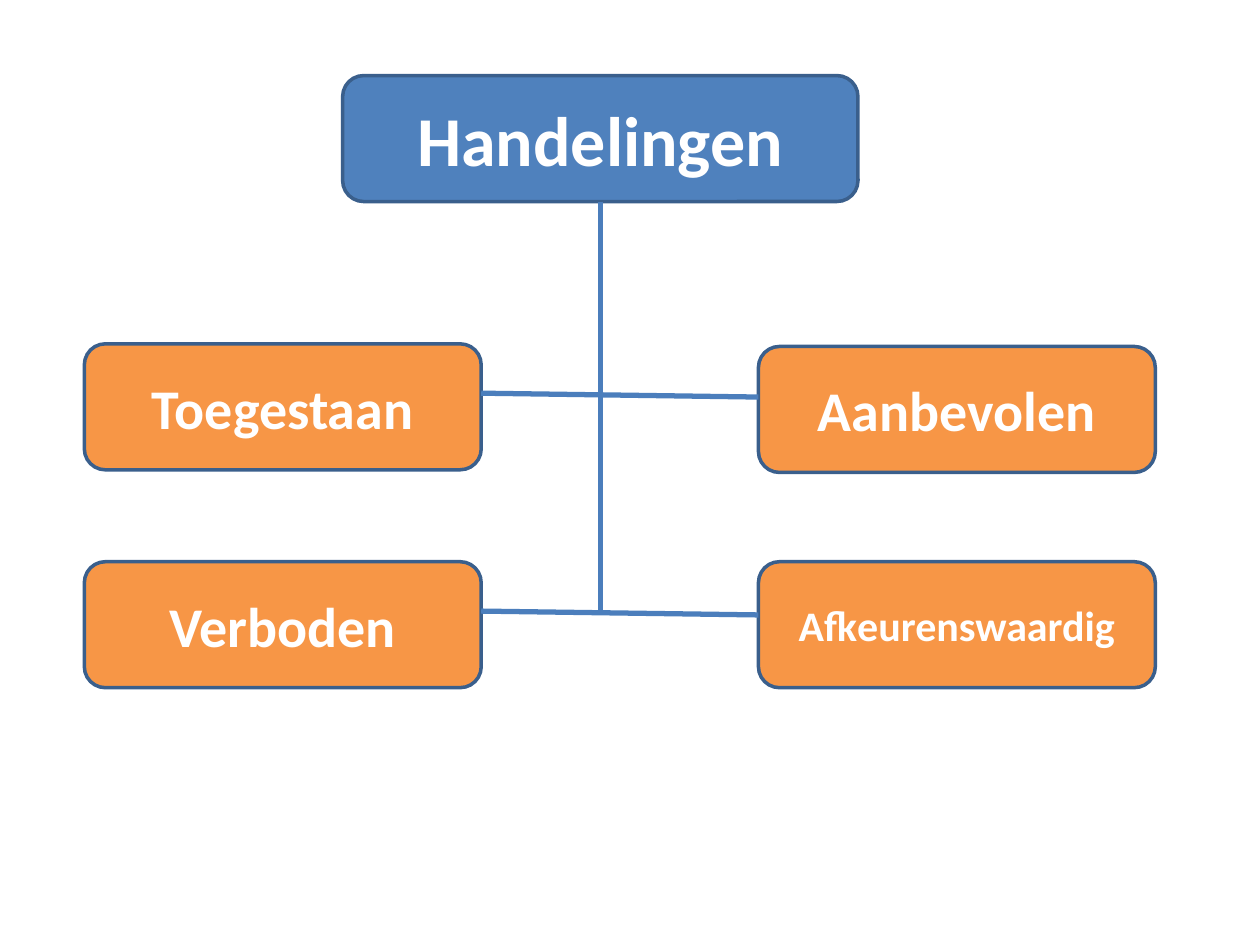
import pptx
import pptx.util
import pptx.dml.color
import pptx.enum.shapes
import pptx.enum.text
import pptx.oxml.ns
import lxml.etree

Pt = pptx.util.Pt

COLORS = {
    "root": "4F81BD",
    "category": "F79646",
    "border": "3A5F8C",
    "connector": "4B7EBC",
    "text": "FFFFFF",
}

ROOT = "Handelingen"
ROWS = [
    [("Toegestaan", 32, 196.5), ("Aanbevolen", 32, 198)],
    [("Verboden", 32, 321), ("Afkeurenswaardig", 24, 321)],
]

ROOT_LEFT, ROOT_TOP, ROOT_WIDTH = 195.8, 43.2, 294.5
COLUMN_LEFTS = [48.2, 433.4]
CATEGORY_WIDTH, BOX_HEIGHT = 226.8, 72
BRANCH_OFFSET, BRANCH_DROP = 28.2, 2.2


def rgb(name):
    return pptx.dml.color.RGBColor.from_string(COLORS[name])


def write_text(frame, text, size, color="text", font="Calibri", bold=True):
    frame.word_wrap = True
    frame.vertical_anchor = pptx.enum.text.MSO_ANCHOR.MIDDLE
    para = frame.paragraphs[0]
    para.alignment = pptx.enum.text.PP_ALIGN.CENTER
    span = para.add_run()
    span.text = text
    span.font.name = font
    span.font.size = Pt(size)
    span.font.bold = bold
    span.font.color.rgb = rgb(color)


def add_box(page, text, size, left, top, width, fill):
    box = page.shapes.add_shape(
        pptx.enum.shapes.MSO_SHAPE.ROUNDED_RECTANGLE,
        Pt(left), Pt(top), Pt(width), Pt(BOX_HEIGHT),
    )
    box.shadow.inherit = False
    box.fill.solid()
    box.fill.fore_color.rgb = rgb(fill)
    box.line.color.rgb = rgb("border")
    box.line.width = Pt(2)
    write_text(box.text_frame, text, size)
    return box


def add_line(page, start_x, start_y, end_x, end_y):
    line = page.shapes.add_connector(
        pptx.enum.shapes.MSO_CONNECTOR.STRAIGHT,
        Pt(start_x), Pt(start_y), Pt(end_x), Pt(end_y),
    )
    line.line.color.rgb = rgb("connector")
    line.line.width = Pt(3)
    lxml.etree.SubElement(line._element.spPr, pptx.oxml.ns.qn("a:effectLst"))
    return line


def main():
    deck = pptx.Presentation()
    deck.slide_width, deck.slide_height = Pt(720), Pt(540)
    page = deck.slides.add_slide(deck.slide_layouts.get_by_name("Blank"))

    root = add_box(page, ROOT, 40, ROOT_LEFT, ROOT_TOP, ROOT_WIDTH, "root")
    for row in ROWS:
        for left, (text, size, top) in zip(COLUMN_LEFTS, row):
            add_box(page, text, size, left, top, CATEGORY_WIDTH, "category")

    branch_start = COLUMN_LEFTS[0] + CATEGORY_WIDTH
    for row in ROWS:
        branch_y = row[0][2] + BRANCH_OFFSET
        add_line(page, branch_start, branch_y, COLUMN_LEFTS[1], branch_y + BRANCH_DROP)

    trunk_x = ROOT_LEFT + ROOT_WIDTH / 2
    trunk = add_line(page, trunk_x, ROOT_TOP + BOX_HEIGHT, trunk_x, branch_y)
    trunk.begin_connect(root, 2)

    deck.save("out.pptx")


if __name__ == "__main__":
    main()
